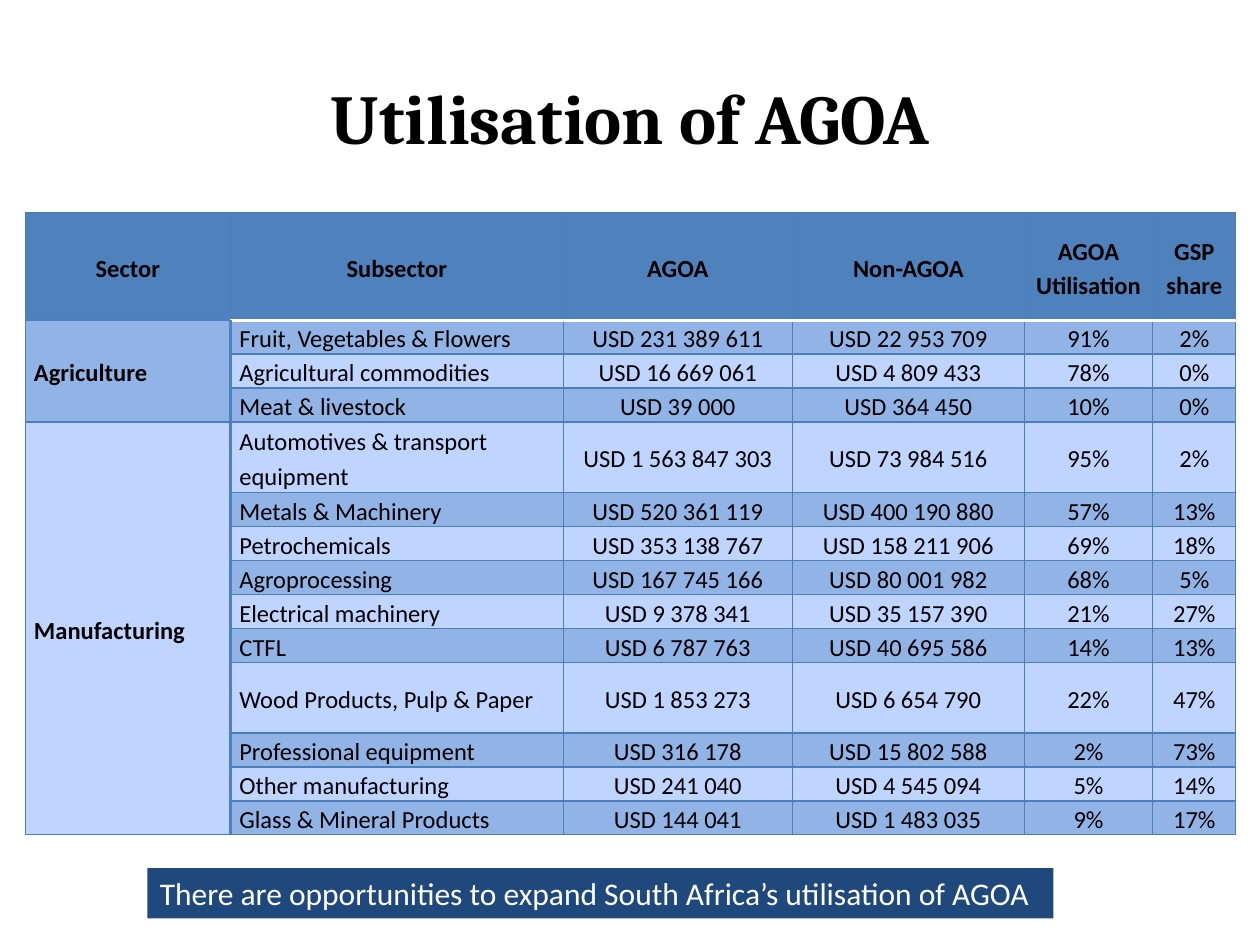
from lxml.etree import SubElement
from pptx import Presentation
from pptx.dml.color import RGBColor
from pptx.enum.shapes import MSO_SHAPE
from pptx.enum.text import MSO_ANCHOR as ANCHOR, PP_ALIGN as ALIGN
from pptx.oxml.ns import qn
from pptx.util import Inches, Pt

BLACK = RGBColor(0x00, 0x00, 0x00)
WHITE = RGBColor(0xFF, 0xFF, 0xFF)
BLUE = RGBColor(0x4F, 0x81, 0xBD)
GRID = RGBColor(0x4B, 0x7E, 0xBC)
NAVY = RGBColor(0x1F, 0x49, 0x7D)
BANDS = (RGBColor(0x92, 0xB3, 0xE5), RGBColor(0xBF, 0xD4, 0xFF))

COL_WIDTHS = (1.63, 2.64, 1.82, 1.84, 1.02, 0.66)
HEADER_HEIGHT, ROW_HEIGHT, TALL_HEIGHT = 0.85, 0.27, 0.56
TALL_ROWS = (4, 10)
HEADER = ("Sector", "Subsector", "AGOA", "Non-AGOA", "AGOA\nUtilisation", "GSP share")
SECTORS = {
    "Agriculture": [
        ("Fruit, Vegetables & Flowers", "USD 231 389 611", "USD 22 953 709", "91%", "2%"),
        ("Agricultural commodities", "USD 16 669 061", "USD 4 809 433", "78%", "0%"),
        ("Meat & livestock", "USD 39 000", "USD 364 450", "10%", "0%"),
    ],
    "Manufacturing": [
        ("Automotives & transport equipment", "USD 1 563 847 303", "USD 73 984 516", "95%", "2%"),
        ("Metals & Machinery", "USD 520 361 119", "USD 400 190 880", "57%", "13%"),
        ("Petrochemicals", "USD 353 138 767", "USD 158 211 906", "69%", "18%"),
        ("Agroprocessing", "USD 167 745 166", "USD 80 001 982", "68%", "5%"),
        ("Electrical machinery", "USD 9 378 341", "USD 35 157 390", "21%", "27%"),
        ("CTFL", "USD 6 787 763", "USD 40 695 586", "14%", "13%"),
        ("Wood Products, Pulp & Paper", "USD 1 853 273", "USD 6 654 790", "22%", "47%"),
        ("Professional equipment", "USD 316 178", "USD 15 802 588", "2%", "73%"),
        ("Other manufacturing", "USD 241 040", "USD 4 545 094", "5%", "14%"),
        ("Glass & Mineral Products", "USD 144 041", "USD 1 483 035", "9%", "17%"),
    ],
}


class Deck:
    """Holds the text style and the current slide."""

    body_font, title_font = "Calibri", "Cambria"

    def __init__(self, slide):
        self.s = slide

    def put_text(self, tf, text, size, color, bold=False, align=ALIGN.LEFT, font=None,
                 spacing=None):
        tf.text = text
        for p in tf.paragraphs:
            p.alignment = align
            p.line_spacing = spacing
            p.font.name = font or self.body_font
            p.font.size = Pt(size)
            p.font.bold = bold
            p.font.color.rgb = color

    def title(self, text, left, top, width, height):
        box = self.s.shapes.add_textbox(Inches(left), Inches(top), Inches(width), Inches(height))
        tf = box.text_frame
        tf.word_wrap = True
        tf.vertical_anchor = ANCHOR.MIDDLE
        self.put_text(tf, text, 40, BLACK, True, ALIGN.CENTER, self.title_font)

    def banner(self, text, left, top, width, height):
        sp = self.s.shapes.add_shape(MSO_SHAPE.RECTANGLE, Inches(left), Inches(top),
                                     Inches(width), Inches(height))
        sp.shadow.inherit = False
        sp.fill.solid()
        sp.fill.fore_color.rgb = NAVY
        sp.line.fill.background()
        sp.text_frame.word_wrap = True
        self.put_text(sp.text_frame, text, 18, WHITE)

    def table(self, left, top, widths, heights):
        frame = self.s.shapes.add_table(len(heights), len(widths), Inches(left), Inches(top),
                                        Inches(sum(widths)), Inches(sum(heights)))
        table = frame.table
        for column, width in zip(table.columns, widths):
            column.width = Inches(width)
        for row, height in zip(table.rows, heights):
            row.height = Inches(height)
        return table

    def borders(self, cell, **special):
        """Thin grid lines, except for the sides given as (colour, points)."""
        tc_pr = cell._tc.get_or_add_tcPr()
        for side in "LRTB":
            color, points = special.get(side, (GRID, 0.75))
            ln = SubElement(tc_pr, qn(f"a:ln{side}"), w=str(Pt(points)))
            SubElement(SubElement(ln, qn("a:solidFill")), qn("a:srgbClr"), val=str(color))

    def cell(self, cell, text, fill, bold=False, align=ALIGN.CENTER):
        cell.margin_left = cell.margin_right = Inches(0.07)
        cell.margin_top = cell.margin_bottom = 0
        cell.vertical_anchor = ANCHOR.MIDDLE
        cell.fill.solid()
        cell.fill.fore_color.rgb = fill
        self.put_text(cell.text_frame, text, 14, BLACK, bold, align, spacing=1.15)


def special_borders(row, col):
    """White rule under the header, thick blue rule beside the sectors."""
    sides = {}
    if col and row < 2:
        sides["T" if row else "B"] = (WHITE, 2)
    if row and col < 2:
        sides["L" if col else "R"] = (BLUE, 2)
    return sides


def main():
    prs = Presentation()
    prs.slide_width, prs.slide_height = Inches(10), Inches(7.5)
    deck = Deck(prs.slides.add_slide(prs.slide_layouts[6]))

    deck.title("Utilisation of AGOA", 0.5, 0.3, 9, 1.25)

    # Table grid
    count = sum(len(rows) for rows in SECTORS.values())
    heights = [HEADER_HEIGHT] + [TALL_HEIGHT if r in TALL_ROWS else ROW_HEIGHT
                                 for r in range(1, count + 1)]
    table = deck.table(0.2, 1.69, COL_WIDTHS, heights)
    for r in range(len(heights)):
        for c in range(len(COL_WIDTHS)):
            deck.borders(table.cell(r, c), **special_borders(r, c))

    # Header row
    for c, text in enumerate(HEADER):
        deck.cell(table.cell(0, c), text, BLUE, bold=True)

    # Sectors with their banded rows
    r = 1
    for sector, rows in SECTORS.items():
        table.cell(r, 0).merge(table.cell(r + len(rows) - 1, 0))
        deck.cell(table.cell(r, 0), sector, BANDS[(r - 1) % 2], True, ALIGN.LEFT)
        for values in rows:
            for c, text in enumerate(values, 1):
                align = ALIGN.LEFT if c == 1 else ALIGN.CENTER
                deck.cell(table.cell(r, c), text, BANDS[(r - 1) % 2], align=align)
            r += 1

    # Conclusion
    deck.banner("There are opportunities to expand South Africa’s utilisation of AGOA",
                1.17, 6.89, 7.19, 0.4)

    prs.save("out.pptx")


if __name__ == "__main__":
    main()
